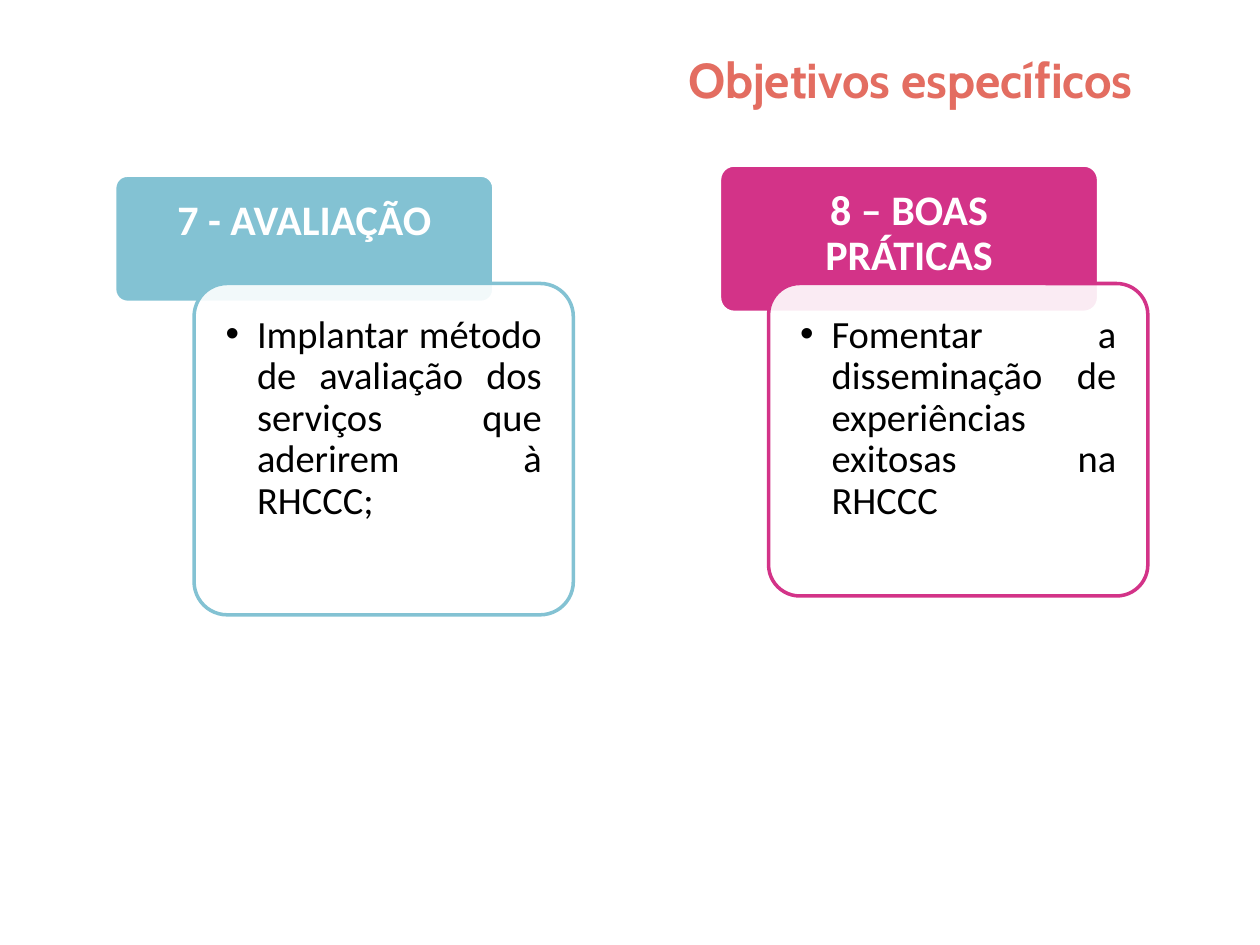
from lxml import etree
from pptx import Presentation
from pptx.dml.color import RGBColor
from pptx.enum.shapes import MSO_SHAPE as Shape
from pptx.enum.text import MSO_ANCHOR as Anchor, PP_ALIGN as Align
from pptx.oxml.ns import qn
from pptx.util import Inches, Pt

CORAL = RGBColor(0xE3, 0x6D, 0x61)
BLUE = RGBColor(0x83, 0xC2, 0xD3)
PINK = RGBColor(0xD3, 0x33, 0x88)
WHITE = RGBColor(0xFF, 0xFF, 0xFF)
BLACK = RGBColor(0, 0, 0)

CARD_WIDTH = 3.01
BODY_TOP = 2.25
BODY_INSET = 0.08

# color, heading, header (left, top, height), header text height,
# body text, body (left, height)
CARDS = [
    (BLUE, "7 - AVALIAÇÃO", (0.91, 1.39, 1.01), 0.67,
     "Implantar método de avaliação dos serviços que aderirem à RHCCC;",
     (1.54, 2.63)),
    (PINK, "8 – BOAS PRÁTICAS", (5.71, 1.31, 1.17), 0.78,
     "Fomentar a disseminação de experiências exitosas na RHCCC",
     (6.1, 2.48)),
]


class SlideBuilder:
    TITLE = {"name": "Cabin", "size": Pt(28), "bold": True}
    HEADING = {"name": "Calibri", "size": Pt(24), "bold": True}
    BODY = {"name": "Calibri", "size": Pt(22), "bold": False}

    def __init__(self, page):
        self.page = page

    def fill_paragraph(self, frame, text, style, color, align):
        para = frame.paragraphs[0]
        para.alignment = align
        span = para.add_run()
        span.text = text
        for key, value in style.items():
            setattr(span.font, key, value)
        span.font.color.rgb = color
        return para

    def title(self, text, area):
        box = self.page.shapes.title
        box.left, box.top, box.width, box.height = map(Inches, area)
        box.text_frame.vertical_anchor = Anchor.MIDDLE
        self.fill_paragraph(box.text_frame, text, self.TITLE, CORAL, Align.RIGHT)

    def panel(self, area, fill, line, opacity=100):
        panel = self.page.shapes.add_shape(Shape.ROUNDED_RECTANGLE, *map(Inches, area))
        panel.adjustments[0] = 0.1
        panel.shadow.inherit = False
        panel.fill.solid()
        panel.fill.fore_color.rgb = fill
        panel.line.color.rgb = line
        panel.line.width = Pt(2)
        if opacity < 100:
            solid = panel._element.spPr.find(qn("a:solidFill"))
            etree.SubElement(solid[0], qn("a:alpha"), val=str(opacity * 1000))

    def text(self, area, text, style, color, align, margins):
        box = self.page.shapes.add_textbox(*map(Inches, area))
        frame = box.text_frame
        frame.word_wrap = True
        for side, margin in zip(("left", "top", "right", "bottom"), margins):
            setattr(frame, f"margin_{side}", Inches(margin))
        para = self.fill_paragraph(frame, text, style, color, align)
        para.line_spacing = 0.9
        return para

    def bullet(self, para, indent):
        properties = para._p.get_or_add_pPr()
        properties.set("marL", str(Inches(indent)))
        properties.set("indent", str(-Inches(indent)))
        etree.SubElement(properties, qn("a:buFont"), typeface="Arial")
        etree.SubElement(properties, qn("a:buChar"), char="•")

    def card(self, color, heading, header, heading_height, body_text, body):
        left, top, height = header
        self.panel((left, top, CARD_WIDTH, height), color, WHITE)
        self.text((left, top, CARD_WIDTH, heading_height), heading,
                  self.HEADING, WHITE, Align.CENTER, (0.19, 0.19, 0.19, 0.1))

        left, height = body
        self.panel((left, BODY_TOP, CARD_WIDTH, height), WHITE, color, opacity=90)
        inner = (left + BODY_INSET, BODY_TOP + BODY_INSET,
                 CARD_WIDTH - 2 * BODY_INSET, height - 2 * BODY_INSET)
        para = self.text(inner, body_text, self.BODY, BLACK, Align.JUSTIFY, [0.17] * 4)
        self.bullet(para, 0.25)


def main():
    deck = Presentation()
    deck.slide_width, deck.slide_height = Inches(10), Inches(7.5)
    builder = SlideBuilder(deck.slides.add_slide(deck.slide_layouts[5]))
    builder.title("Objetivos específicos", (0.43, 0, 8.66, 1.25))
    for card in CARDS:
        builder.card(*card)
    deck.save("out.pptx")


if __name__ == "__main__":
    main()
